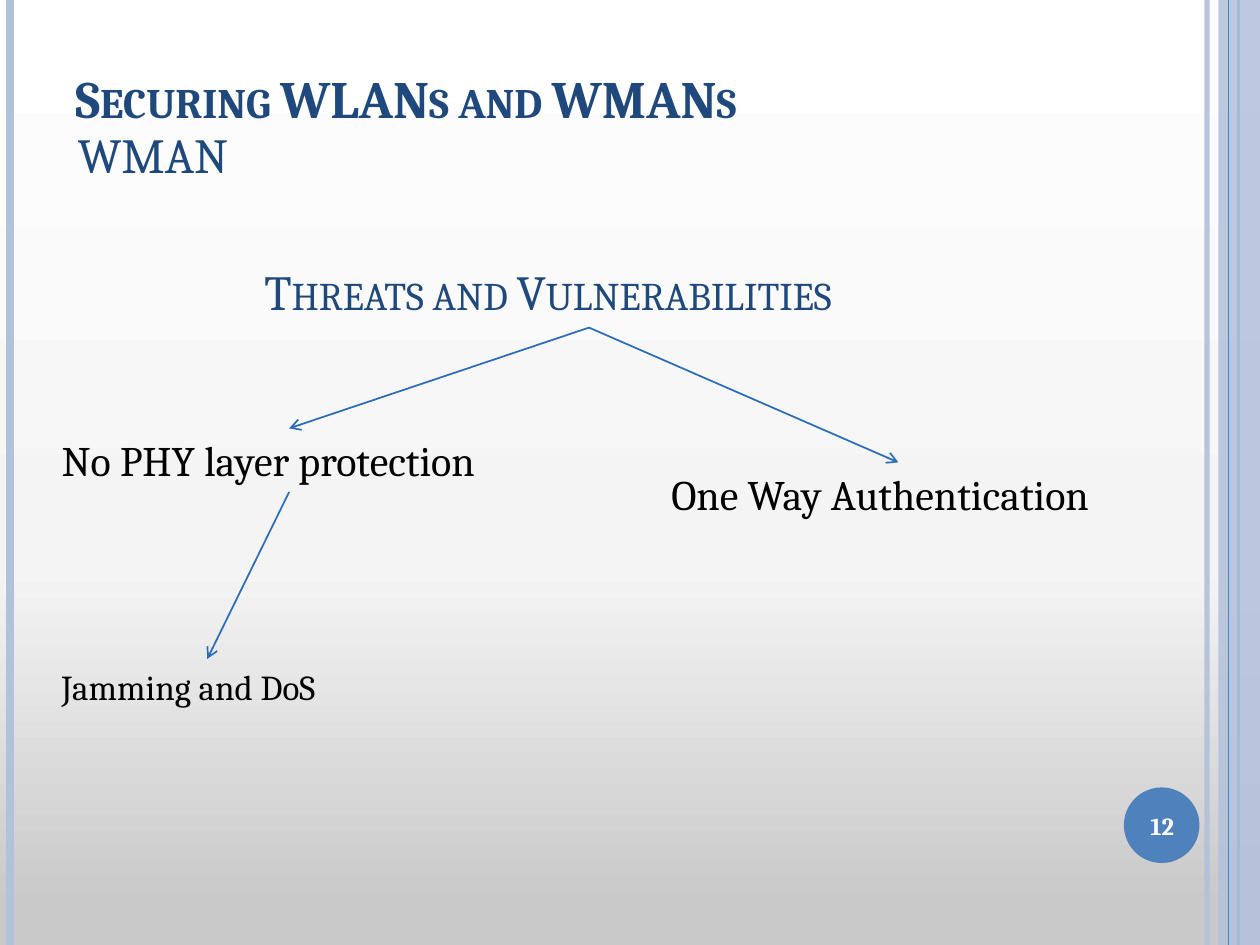
from dataclasses import dataclass

from pptx import Presentation
from pptx.dml.color import RGBColor
from pptx.enum.shapes import MSO_CONNECTOR, MSO_SHAPE
from pptx.enum.text import MSO_ANCHOR, MSO_AUTO_SIZE, PP_ALIGN
from pptx.oxml import parse_xml
from pptx.oxml.ns import nsdecls
from pptx.util import Inches, Pt

WIDE, HIGH = Inches(10), Inches(7.5)
FONT = "Cambria"
NAVY, BLUE, PALE, ARROW = "1F497D", "4F81BD", "B3C1DB", "2C6CB9"
BLACK, WHITE = "000000", "FFFFFF"
TOP, BOTTOM = 0, 2  # connection sites


@dataclass
class Area:
    """Left, top, width and height in percent of the slide."""
    x: float
    y: float
    w: float
    h: float

    def box(self) -> tuple:
        return across(self.x), down(self.y), across(self.w), down(self.h)


@dataclass
class Label:
    text: str
    area: Area
    size: float
    color: str = BLACK
    bold: bool = False
    small: bool = False
    fixed: bool = False  # wraps inside a fixed box
    align: PP_ALIGN = PP_ALIGN.LEFT
    anchor: MSO_ANCHOR = MSO_ANCHOR.TOP


@dataclass
class Rule:
    x: float
    color: str
    width: float
    alpha: int = 100


def across(share: float) -> int:
    return round(WIDE * share / 100)


def down(share: float) -> int:
    return round(HIGH * share / 100)


def rgb(code: str) -> RGBColor:
    return RGBColor.from_string(code)


def fade(fill, alpha: int) -> None:
    """Make a solid fill partly transparent."""
    if alpha < 100:
        tint = fill._xPr.find(".//{*}srgbClr")
        tint.append(parse_xml(f'<a:alpha {nsdecls("a")} val="{alpha * 1000}"/>'))


def draw_line(slide, start: tuple, end: tuple, color: str, width: float):
    line = slide.shapes.add_connector(MSO_CONNECTOR.STRAIGHT, *start, *end)
    line.line.color.rgb = rgb(color)
    line.line.width = Pt(width)
    line._element.spPr.append(parse_xml(f'<a:effectLst {nsdecls("a")}/>'))
    return line


def draw_rule(slide, rule: Rule) -> None:
    x = across(rule.x)
    line = draw_line(slide, (x, 0), (x, HIGH), rule.color, rule.width)
    fade(line.line.fill, rule.alpha)


def draw_shape(slide, kind, area: Area, color: str, alpha: int = 100) -> None:
    shape = slide.shapes.add_shape(kind, *area.box())
    shape.shadow.inherit = False
    shape.fill.solid()
    shape.fill.fore_color.rgb = rgb(color)
    fade(shape.fill, alpha)
    shape.line.fill.background()


def draw_label(slide, label: Label):
    box = slide.shapes.add_textbox(*label.area.box())
    frame = box.text_frame
    frame.word_wrap = label.fixed
    frame.auto_size = (MSO_AUTO_SIZE.NONE if label.fixed
                       else MSO_AUTO_SIZE.SHAPE_TO_FIT_TEXT)
    frame.vertical_anchor = label.anchor
    para = frame.paragraphs[0]
    para.alignment = label.align
    run = para.add_run()
    run.text = label.text
    font = run.font
    font.name, font.size, font.bold = FONT, Pt(label.size), label.bold
    font.color.rgb = rgb(label.color)
    if label.small:
        font._element.set("cap", "small")
    return box


def join(slide, upper, lower) -> None:
    """Draw an arrow from the foot of one label to the head of another."""
    line = draw_line(slide, (0, 0), (0, 0), ARROW, 1)
    line.begin_connect(upper, BOTTOM)
    line.end_connect(lower, TOP)
    line.line._get_or_add_ln().append(
        parse_xml(f'<a:tailEnd {nsdecls("a")} type="arrow"/>'))


def paint_back(slide) -> None:
    """Grey at the foot, rising to white."""
    stops = "".join(
        f'<a:gs pos="{pos * 1000}"><a:srgbClr val="{color}"/></a:gs>'
        for pos, color in ((4, "C9C9C9"), (40, "F4F4F4"), (100, WHITE)))
    slide._element.cSld.insert(0, parse_xml(
        f'<p:bg {nsdecls("p", "a")}><p:bgPr><a:gradFill rotWithShape="1">'
        f'<a:gsLst>{stops}</a:gsLst><a:lin ang="16200000" scaled="0"/>'
        '</a:gradFill><a:effectLst/></p:bgPr></p:bg>'))


RULES = [
    Rule(95.8, PALE, 3, 93),
    Rule(0.8, PALE, 4.5),
    Rule(98.3, BLUE, 1.5),
]
EDGE = Rule(97.5, BLUE, 0.75)
BAND = Area(96.7, 0, 3.3, 100)
BADGE = Area(89.2, 83.33, 6, 8)

HEADS = [
    Label("12", Area(88.9, 83.6, 6.7, 7.6), 14, WHITE, bold=True, fixed=True,
          align=PP_ALIGN.CENTER, anchor=MSO_ANCHOR.MIDDLE),
    Label("Securing WLANs and WMANs", Area(5, 4.67, 81.7, 9.6), 30, NAVY,
          bold=True, small=True, fixed=True, anchor=MSO_ANCHOR.BOTTOM),
    Label("WMAN", Area(5.2, 12.53, 14.4, 7.6), 28, NAVY, small=True),
]
NODES = {
    "root": Label("Threats and Vulnerabilities", Area(20, 27.07, 53.5, 7.6),
                  28, NAVY, small=True),
    "phy": Label("No PHY layer protection", Area(3.9, 45.33, 38.1, 6.73), 24),
    "auth": Label("One Way Authentication", Area(52.3, 48.93, 38, 6.73), 24),
    "jam": Label("Jamming and DoS", Area(3.9, 69.73, 25.1, 5.87), 20),
}
LINKS = [("root", "phy"), ("root", "auth"), ("phy", "jam")]


def main() -> None:
    deck = Presentation()
    deck.slide_width, deck.slide_height = WIDE, HIGH
    slide = deck.slides.add_slide(deck.slide_layouts[6])

    # Background and side bands
    paint_back(slide)
    for rule in RULES:
        draw_rule(slide, rule)
    draw_shape(slide, MSO_SHAPE.RECTANGLE, BAND, PALE, 87)
    draw_rule(slide, EDGE)

    # Page badge and headings
    draw_shape(slide, MSO_SHAPE.OVAL, BADGE, BLUE)
    for label in HEADS:
        draw_label(slide, label)

    # Threat tree
    boxes = {key: draw_label(slide, node) for key, node in NODES.items()}
    for upper, lower in LINKS:
        join(slide, boxes[upper], boxes[lower])

    deck.save("out.pptx")


if __name__ == "__main__":
    main()
